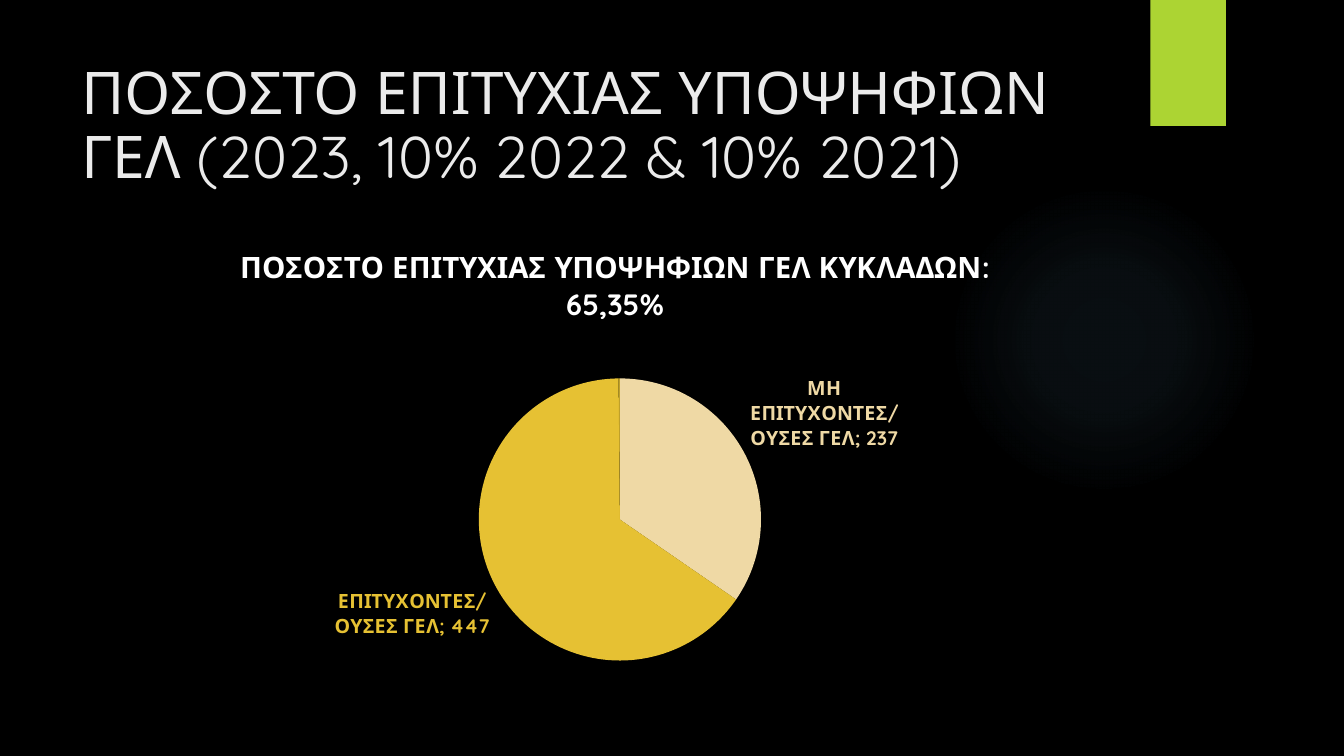
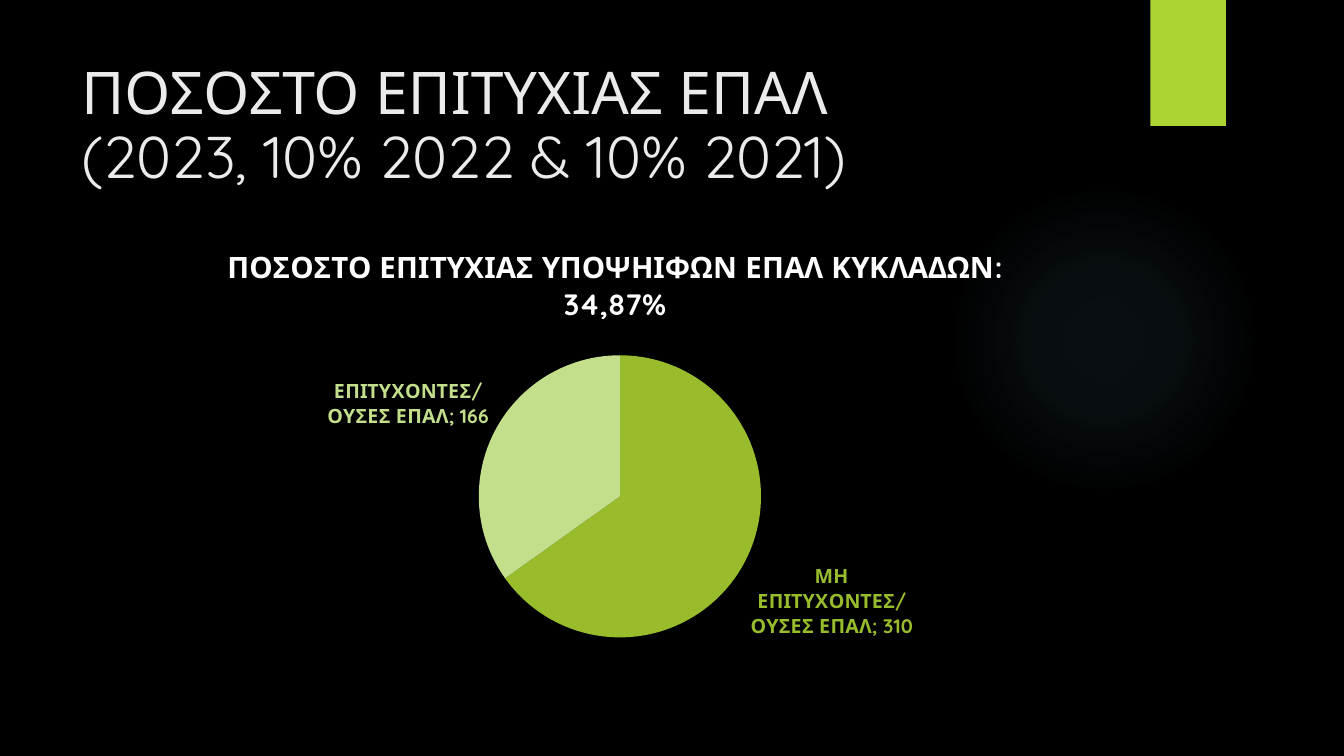
from dataclasses import dataclass

from lxml import etree
from pptx import Presentation
from pptx.chart.chart import Chart
from pptx.chart.data import CategoryChartData
from pptx.dml.color import RGBColor
from pptx.dml.fill import FillFormat
from pptx.enum.chart import XL_CHART_TYPE as ChartType, XL_LABEL_POSITION as LabelPosition
from pptx.enum.shapes import MSO_SHAPE as Preset
from pptx.enum.text import MSO_ANCHOR as Anchor
from pptx.oxml import parse_xml
from pptx.oxml.ns import nsdecls, qn
from pptx.slide import Slide
from pptx.text.text import Font
from pptx.util import Inches, Pt

FONT = "Quicksand"
BLACK = "000000"
WHITE = "FFFFFF"
TITLE_COLOR = "EBEBEB"
ACCENT = "ACD433"
GLOW = "7AC4F0"
GLOW_STOPS = ((0, 7), (36, 6), (69, 0))
PIE_WIDTH, PIE_HEIGHT = 0.29, 0.61


@dataclass(frozen=True)
class Slice:
    name: str
    value: int
    color: str
    labelled: bool = True


@dataclass(frozen=True)
class ResultPage:
    title: str
    title_width: float
    chart_title: str
    pie_left: float
    pie_top: float
    slices: tuple[Slice, ...]


PAGES = (
    ResultPage(
        "ΠΟΣΟΣΤΟ ΕΠΙΤΥΧΙΑΣ ΥΠΟΨΗΦΙΩΝ ΓΕΛ (2023, 10% 2022 & 10% 2021)",
        10.78,
        "ΠΟΣΟΣΤΟ ΕΠΙΤΥΧΙΑΣ ΥΠΟΨΗΦΙΩΝ ΓΕΛ ΚΥΚΛΑΔΩΝ: 65,35%",
        0.36,
        0.33,
        (
            Slice("ΜΗ ΕΠΙΤΥΧΟΝΤΕΣ/ΟΥΣΕΣ ΓΕΛ", 237, "EFD9A5"),
            Slice("ΕΠΙΤΥΧΟΝΤΕΣ/ΟΥΣΕΣ ΓΕΛ", 447, "E6C133"),
            Slice("ΠΟΣΟΣΤΟ ΕΠΙΤΥΧΙΑΣ ΓΕΛ", 1, "BFA02A", labelled=False),
        ),
    ),
    ResultPage(
        "ΠΟΣΟΣΤΟ ΕΠΙΤΥΧΙΑΣ ΕΠΑΛ\n(2023, 10% 2022 & 10% 2021)",
        10.29,
        "ΠΟΣΟΣΤΟ ΕΠΙΤΥΧΙΑΣ ΥΠΟΨΗΙΦΩΝ ΕΠΑΛ ΚΥΚΛΑΔΩΝ: 34,87%",
        0.36,
        0.28,
        (
            Slice("ΜΗ ΕΠΙΤΥΧΟΝΤΕΣ/ΟΥΣΕΣ ΕΠΑΛ", 310, "99BC2D"),
            Slice("ΕΠΙΤΥΧΟΝΤΕΣ/ΟΥΣΕΣ ΕΠΑΛ", 166, "C3DF8B"),
        ),
    ),
)


def paint(fill: FillFormat, color: str) -> None:
    fill.solid()
    fill.fore_color.rgb = RGBColor.from_string(color)


def style_font(font: Font, size: float, color: str, bold: bool = False) -> None:
    font.name = FONT
    font.size = Pt(size)
    font.bold = bold
    font.color.rgb = RGBColor.from_string(color)


def add_backdrop(page: Slide) -> None:
    paint(page.background.fill, BLACK)
    glow = page.shapes.add_shape(
        Preset.OVAL, Inches(9.41), Inches(1.83), Inches(3.08), Inches(3.08)
    )
    stops = "".join(
        f'<a:gs pos="{position * 1000}"><a:srgbClr val="{GLOW}">'
        f'<a:alpha val="{alpha * 1000}"/></a:srgbClr></a:gs>'
        for position, alpha in GLOW_STOPS
    )
    gradient = parse_xml(
        f'<a:gradFill {nsdecls("a")}><a:gsLst>{stops}</a:gsLst><a:path path="circle">'
        '<a:fillToRect l="50000" t="50000" r="50000" b="50000"/></a:path></a:gradFill>'
    )
    glow._element.spPr.find(qn("a:prstGeom")).addnext(gradient)

    tab = page.shapes.add_shape(
        Preset.RECTANGLE, Inches(11.41), Inches(0), Inches(0.75), Inches(1.25)
    )
    paint(tab.fill, ACCENT)
    for shape in (glow, tab):
        shape.line.fill.background()
        shape.shadow.inherit = False


def add_title(page: Slide, text: str, width: float) -> None:
    box = page.shapes.add_textbox(Inches(0.71), Inches(0.5), Inches(width), Inches(1.53))
    frame = box.text_frame
    frame.word_wrap = True
    frame.vertical_anchor = Anchor.MIDDLE
    para = frame.paragraphs[0]
    para.text = text
    para.line_spacing = 0.9
    for span in para.runs:
        style_font(span.font, 42, TITLE_COLOR)


def place_pie(chart: Chart, left: float, top: float) -> None:
    area = chart._chartSpace.chart.plotArea
    for layout in area.findall(qn("c:layout")):
        area.remove(layout)
    layout = etree.Element(qn("c:layout"))
    manual = etree.SubElement(layout, qn("c:manualLayout"))
    settings = (
        ("layoutTarget", "inner"),
        ("xMode", "edge"),
        ("yMode", "edge"),
        ("x", left),
        ("y", top),
        ("w", PIE_WIDTH),
        ("h", PIE_HEIGHT),
    )
    for name, value in settings:
        etree.SubElement(manual, qn(f"c:{name}")).set("val", str(value))
    area.insert(0, layout)


def add_pie(page: Slide, content: ResultPage) -> None:
    data = CategoryChartData(number_format="#,##0")
    data.categories = [item.name for item in content.slices]
    data.add_series("Series 1", [item.value for item in content.slices])
    chart = page.shapes.add_chart(
        ChartType.PIE, Inches(1.21), Inches(2.24), Inches(9.78), Inches(4.59), data
    ).chart
    style_font(chart.font, 10, WHITE)
    chart.has_legend = False
    heading = chart.chart_title.text_frame.paragraphs[0]
    heading.text = content.chart_title
    style_font(heading.runs[0].font, 21, WHITE, bold=True)
    place_pie(chart, content.pie_left, content.pie_top)

    plot = chart.plots[0]
    plot.vary_by_categories = True
    series = plot.series[0]
    series.data_labels.show_value = False
    for index, item in enumerate(content.slices):
        point = series.points[index]
        paint(point.format.fill, item.color)
        point.format.line.fill.background()
        if item.labelled:
            label = point.data_label
            style_font(label.font, 14, item.color, bold=True)
            label.position = LabelPosition.OUTSIDE_END
    for label_xml in series._element.iter(qn("c:dLbl")):
        label_xml.find(qn("c:showCatName")).set("val", "1")


def main() -> None:
    deck = Presentation()
    deck.slide_width, deck.slide_height = Inches(13.33), Inches(7.5)
    blank = deck.slide_layouts[6]
    for content in PAGES:
        page = deck.slides.add_slide(blank)
        add_backdrop(page)
        add_title(page, content.title, content.title_width)
        add_pie(page, content)
    deck.save("out.pptx")


if __name__ == "__main__":
    main()
